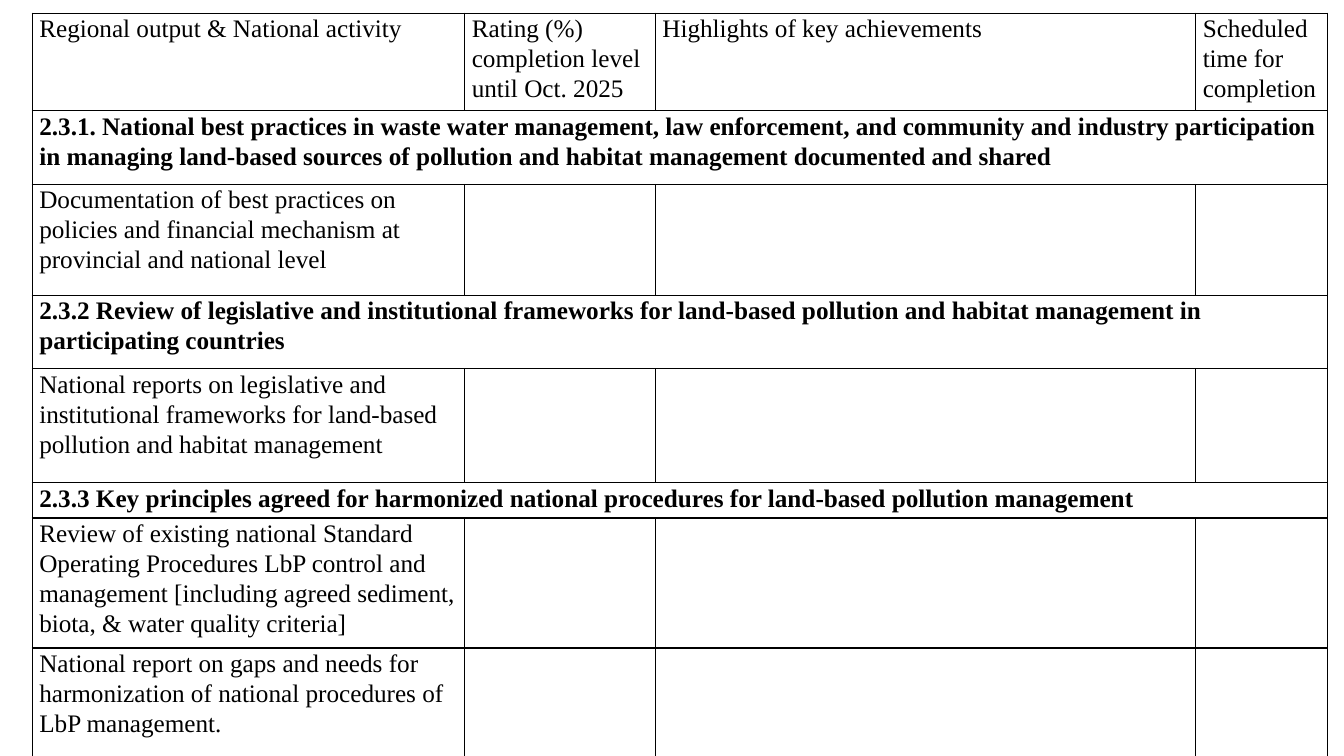
from lxml.etree import SubElement
from pptx import Presentation
from pptx.dml.color import RGBColor
from pptx.oxml.ns import qn
from pptx.util import Inches, Pt

COLORS = {"text": "000000", "border": "000000"}
FONT = "Times New Roman"
COLUMN_WIDTHS = [4.29, 1.89, 5.36, 1.31]
LEFT, TOP = 0.32, 0.13

# Content: (row height, bold section heading?, cell texts)
ROWS = [
    (0.97, False, ["Regional output & National activity",
                   "Rating (%) completion level until Oct. 2025",
                   "Highlights of key achievements",
                   "Scheduled time for completion"]),
    (0.73, True, ["2.3.1. National best practices in waste water management, law "
                  "enforcement, and community and industry participation in managing "
                  "land-based sources of pollution and habitat management documented "
                  "and shared"]),
    (1.1, False, ["Documentation of best practices on policies and financial "
                  "mechanism at provincial and national level"]),
    (0.73, True, ["2.3.2 Review of legislative and institutional frameworks for "
                  "land-based pollution and habitat management in participating "
                  "countries"]),
    (1.13, False, ["National reports on legislative and institutional frameworks for "
                   "land-based pollution and habitat management"]),
    (0.35, True, ["2.3.3 Key principles agreed for harmonized national procedures for "
                  "land-based pollution management"]),
    (1.29, False, ["Review of existing national Standard Operating Procedures LbP "
                   "control and management [including agreed sediment, biota, & water "
                   "quality criteria]"]),
    (1.1, False, ["National report on gaps and needs for harmonization of national "
                  "procedures of LbP management."]),
]


def format_cell(cell):
    """Thin border on every side, no fill, narrow side margins."""
    properties = cell._tc.get_or_add_tcPr()
    for side in ("a:lnL", "a:lnR", "a:lnT", "a:lnB"):
        line = SubElement(properties, qn(side), w=str(Pt(1)))
        fill = SubElement(line, qn("a:solidFill"))
        SubElement(fill, qn("a:srgbClr"), val=COLORS["border"])
    cell.fill.background()
    cell.margin_left = cell.margin_right = Inches(0.07)
    cell.margin_top = cell.margin_bottom = 0


def write_cell(cell, text, bold):
    cell.text = text
    paragraph = cell.text_frame.paragraphs[0]
    paragraph.line_spacing = 1.07
    paragraph.space_after = Pt(8)
    paragraph.font.name = FONT
    paragraph.font.size = Pt(18)
    paragraph.font.bold = bold
    paragraph.font.color.rgb = RGBColor.from_string(COLORS["text"])


def main():
    prs = Presentation()
    prs.slide_width, prs.slide_height = Inches(13.33), Inches(7.5)
    slide = prs.slides.add_slide(prs.slide_layouts[6])

    # Progress table
    total_height = sum(height for height, _, _ in ROWS)
    progress = slide.shapes.add_table(
        len(ROWS), len(COLUMN_WIDTHS), Inches(LEFT), Inches(TOP),
        Inches(sum(COLUMN_WIDTHS)), Inches(total_height)).table
    progress.first_row = progress.horz_banding = False
    for column, width in zip(progress.columns, COLUMN_WIDTHS):
        column.width = Inches(width)

    # Headings span the full width; activities leave later columns empty
    for index, (height, is_section, texts) in enumerate(ROWS):
        row = progress.rows[index]
        row.height = Inches(height)
        for cell in row.cells:
            format_cell(cell)
        if is_section:
            row.cells[0].merge(row.cells[len(COLUMN_WIDTHS) - 1])
        for cell, text in zip(row.cells, texts):
            write_cell(cell, text, is_section)

    prs.save("out.pptx")


if __name__ == "__main__":
    main()
